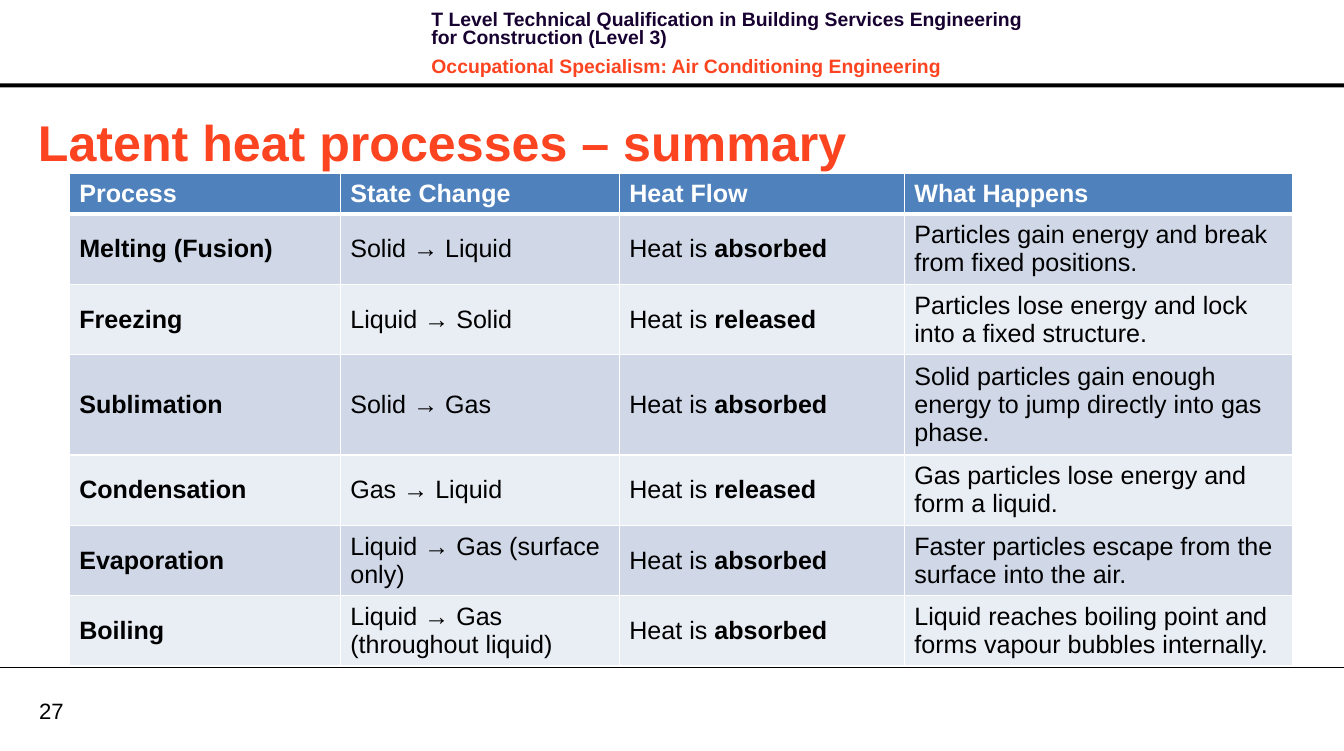
from pptx import Presentation, util as u
from pptx.dml.color import RGBColor
from pptx.enum import shapes, text
from pptx.oxml import parse_xml
from pptx.oxml.ns import nsdecls

PX = 9144
WIDE, HIGH = 1339, 748
BLACK = RGBColor(0x00, 0x00, 0x00)
WHITE = RGBColor(0xFF, 0xFF, 0xFF)
NAVY = RGBColor(0x17, 0x01, 0x30)
RED = RGBColor(0xFC, 0x44, 0x21)
BLUE = RGBColor(0x4F, 0x81, 0xBD)
BANDS = RGBColor(0xE9, 0xED, 0xF4), RGBColor(0xD0, 0xD8, 0xE8)

COLS = 270, 278, 284, 387
ROWS = 40, 70, 70, 100, 70, 70, 70
HEADS = "Process", "State Change", "Heat Flow", "What Happens"
FACTS = [
    ("Melting (Fusion)", "Solid → Liquid", "absorbed",
     "Particles gain energy and break from fixed positions."),
    ("Freezing", "Liquid → Solid", "released",
     "Particles lose energy and lock into a fixed structure."),
    ("Sublimation", "Solid → Gas", "absorbed",
     "Solid particles gain enough energy to jump directly into gas phase."),
    ("Condensation", "Gas → Liquid", "released",
     "Gas particles lose energy and form a liquid."),
    ("Evaporation", "Liquid → Gas (surface only)", "absorbed",
     "Faster particles escape from the surface into the air."),
    ("Boiling", "Liquid → Gas (throughout liquid)", "absorbed",
     "Liquid reaches boiling point and forms vapour bubbles internally."),
]


def emu(*sizes):
    return [u.Emu(size * PX) for size in sizes]


def style(para, size, color, bold=None):
    font = para.font
    font.name, font.size, font.bold = "Arial", u.Pt(size), bold
    font.color.rgb = color


def label(slide, box, lines, size, bold=None):
    frame = slide.shapes.add_textbox(*emu(*box)).text_frame
    frame.word_wrap = True
    for i, (words, color) in enumerate(lines):
        para = frame.add_paragraph() if i else frame.paragraphs[0]
        para.text = words
        style(para, size, color, bold)
    return frame


def header(slide, left, top, width, height):
    bar = slide.shapes.add_shape(shapes.MSO_SHAPE.RECTANGLE,
                                 *emu(left, top + height - 4, width, 4))
    bar.shadow.inherit = False
    bar.fill.solid()
    bar.fill.fore_color.rgb = BLACK
    bar.line.fill.background()
    lines = [
        ("T Level Technical Qualification in Building Services Engineering "
         "for Construction (Level 3)", NAVY),
        ("Occupational Specialism: Air Conditioning Engineering", RED),
    ]
    frame = label(slide, (left + 420, top + 7, 633, 64), lines, 13.9, True)
    for i, para in enumerate(frame.paragraphs):
        para.line_spacing = u.Pt(13)
        para.space_before = u.Pt(4 if i else 0)
        para.space_after = u.Pt(4)


def footer(slide, left, top, width, height):
    rule = slide.shapes.add_connector(shapes.MSO_CONNECTOR.STRAIGHT,
                                      *emu(left, top, left + width, top))
    rule.line.color.rgb = BLACK
    rule.line.width = u.Pt(0.75)
    rule._element.spPr.append(parse_xml(f"<a:effectLst {nsdecls('a')}/>"))
    frame = label(slide, (left + 39, top + 29, 64, 27), [("27", BLACK)], 15.9)
    frame.margin_left = frame.margin_right = 0
    frame.margin_top = frame.margin_bottom = 0
    frame.vertical_anchor = text.MSO_ANCHOR.MIDDLE


def border(cell, side, points):
    cell._tc.get_or_add_tcPr().append(parse_xml(
        f'<a:ln{side} {nsdecls("a")} w="{u.Pt(points)}"><a:solidFill>'
        f'<a:srgbClr val="{WHITE}"/></a:solidFill></a:ln{side}>'))


def summary(slide, left, top, width, height):
    grid = slide.shapes.add_table(len(ROWS), len(COLS),
                                  *emu(left, top, width, height)).table
    for col, size in zip(grid.columns, emu(*COLS)):
        col.width = size
    for row, size in zip(grid.rows, emu(*ROWS)):
        row.height = size
    for r, items in enumerate([HEADS, *FACTS]):
        for c, words in enumerate(items):
            cell = grid.cell(r, c)
            cell.vertical_anchor = text.MSO_ANCHOR.MIDDLE
            for side in "LRTB":
                thick = (r, side) in ((0, "B"), (1, "T"))
                border(cell, side, 3 if thick else 1)
            cell.fill.solid()
            cell.fill.fore_color.rgb = BANDS[r % 2] if r else BLUE
            para = cell.text_frame.paragraphs[0]
            if r and c == 2:
                para.add_run().text = "Heat is "
                flow = para.add_run()
                flow.text = words
                flow.font.bold = True
            else:
                para.text = words
            style(para, 18, BLACK if r else WHITE, r == 0 or c == 0)


def main():
    deck = Presentation()
    deck.slide_width, deck.slide_height = emu(WIDE, HIGH)
    slide = deck.slides.add_slide(deck.slide_layouts[6])
    header(slide, 0, 0, WIDE, 87)
    footer(slide, 0, 665, WIDE, HIGH - 665)
    label(slide, (28, 106, 1147, 71),
          [("Latent heat processes – summary", RED)], 36, True)
    summary(slide, 69, 173, sum(COLS), sum(ROWS))
    deck.save("out.pptx")


if __name__ == "__main__":
    main()
